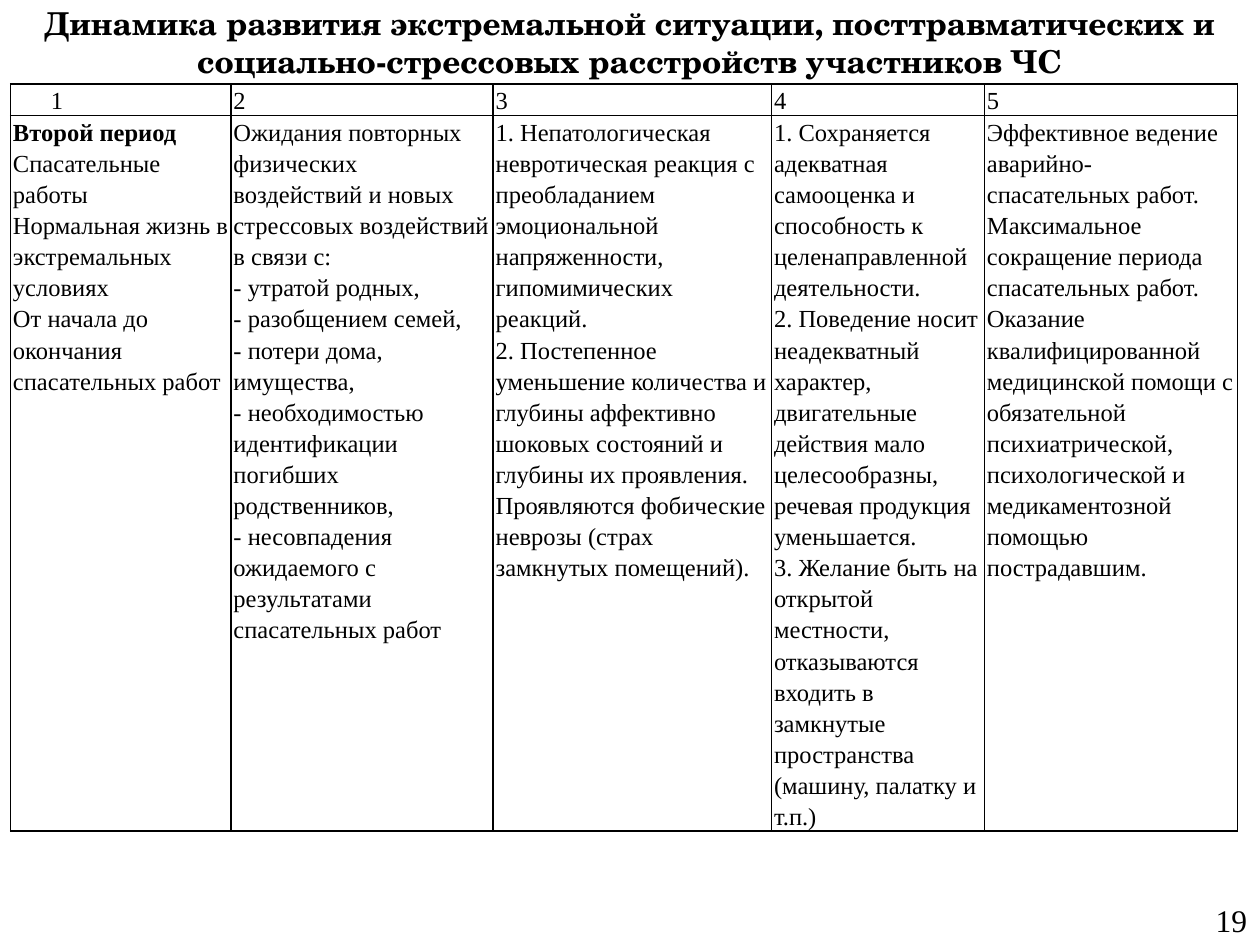
import pptx
import pptx.util
import pptx.dml.color
import pptx.enum.text
import pptx.oxml
import pptx.oxml.ns

Pt = pptx.util.Pt
ALIGN = pptx.enum.text.PP_ALIGN
ANCHOR = pptx.enum.text.MSO_ANCHOR
AUTO = pptx.enum.text.MSO_AUTO_SIZE

BLACK = pptx.dml.color.RGBColor(0x00, 0x00, 0x00)
BODY_FONT = "Times New Roman"
TITLE_FONT = "TeX Gyre Schola"

TITLE = ("Динамика развития экстремальной ситуации, посттравматических и "
         "социально-стрессовых расстройств участников ЧС")
COLUMN_WIDTHS = [126, 149.8, 159.1, 121.7, 144.7]
ROW_HEIGHTS = [18, 408]
PERIOD = [
    ["Второй период",
     "Спасательные работы",
     "Нормальная жизнь в экстремальных условиях",
     "От начала до окончания спасательных работ"],
    ["Ожидания повторных физических воздействий и новых стрессовых "
     "воздействий в связи с:",
     "- утратой родных,",
     "- разобщением семей,",
     "- потери дома, имущества,",
     "- необходимостью идентификации погибших родственников,",
     "- несовпадения ожидаемого с результатами спасательных работ"],
    ["1. Непатологическая невротическая реакция с преобладанием "
     "эмоциональной напряженности, гипомимических реакций.",
     "2. Постепенное уменьшение количества и глубины аффективно шоковых "
     "состояний и глубины их проявления. Проявляются фобические неврозы "
     "(страх замкнутых помещений)."],
    ["1. Сохраняется адекватная самооценка и способность к "
     "целенаправленной деятельности.",
     "2. Поведение носит неадекватный характер, двигательные действия мало "
     "целесообразны, речевая продукция уменьшается.",
     "3. Желание быть на открытой местности, отказываются входить в "
     "замкнутые пространства (машину, палатку и т.п.)"],
    ["Эффективное ведение аварийно-спасательных работ. Максимальное "
     "сокращение периода спасательных работ.",
     "Оказание квалифицированной медицинской помощи с обязательной "
     "психиатрической, психологической и медикаментозной помощью "
     "пострадавшим."],
]
ROWS = [[[str(n)] for n in range(1, len(PERIOD) + 1)], PERIOD]


def set_attrs(obj, **values):
    for name, value in values.items():
        setattr(obj, name, value)


def add_run(p, text, font, size, bold=False):
    r = p.add_run()
    r.text = text
    set_attrs(r.font, name=font, size=Pt(size), bold=bold)
    r.font.color.rgb = BLACK


def add_title(s):
    sp = s.shapes.title
    set_attrs(sp, left=Pt(0), top=Pt(0), width=Pt(720), height=Pt(48))
    tf = sp.text_frame
    set_attrs(tf, word_wrap=True, auto_size=AUTO.NONE,
              vertical_anchor=ANCHOR.MIDDLE)
    p = tf.paragraphs[0]
    p.alignment = ALIGN.CENTER
    add_run(p, TITLE, TITLE_FONT, 18, bold=True)


def set_borders(cell):
    tc_pr = cell._tc.get_or_add_tcPr()
    for i, side in enumerate(("lnL", "lnR", "lnT", "lnB")):
        tc_pr.insert(i, pptx.oxml.parse_xml(
            f'<a:{side} {pptx.oxml.ns.nsdecls("a")} w="{Pt(1)}">'
            f'<a:solidFill><a:srgbClr val="{BLACK}"/></a:solidFill>'
            f'</a:{side}>'))


def fill_cell(cell, lines):
    set_attrs(cell, margin_left=Pt(1.44), margin_right=Pt(1.44),
              margin_top=0, margin_bottom=0)
    cell.fill.background()
    set_borders(cell)
    tf = cell.text_frame
    for i, line in enumerate(lines):
        p = tf.add_paragraph() if i else tf.paragraphs[0]
        p.line_spacing = 1.15
        add_run(p, line, BODY_FONT, 14, bold=line == "Второй период")


def add_period_table(s):
    frame = s.shapes.add_table(len(ROWS), len(COLUMN_WIDTHS), Pt(6), Pt(48),
                               Pt(sum(COLUMN_WIDTHS)), Pt(sum(ROW_HEIGHTS)))
    table = frame.table
    set_attrs(table, first_row=False, horz_banding=False)
    for column, width in zip(table.columns, COLUMN_WIDTHS):
        column.width = Pt(width)
    for row, height, texts in zip(table.rows, ROW_HEIGHTS, ROWS):
        row.height = Pt(height)
        for cell, lines in zip(row.cells, texts):
            fill_cell(cell, lines)
    p = table.cell(0, 0).text_frame.paragraphs[0]
    p.alignment = ALIGN.JUSTIFY
    p._p.get_or_add_pPr().set("indent", str(Pt(21.6)))


def add_page_number(s):
    sp = s.shapes.add_textbox(Pt(687.6), Pt(511.2), Pt(32.4), Pt(28.8))
    tf = sp.text_frame
    set_attrs(tf, word_wrap=False, auto_size=AUTO.SHAPE_TO_FIT_TEXT)
    add_run(tf.paragraphs[0], "19", BODY_FONT, 18)


def main():
    prs = pptx.Presentation()
    set_attrs(prs, slide_width=Pt(720), slide_height=Pt(540))
    s = prs.slides.add_slide(prs.slide_layouts[5])
    add_title(s)
    add_period_table(s)
    add_page_number(s)
    prs.save("out.pptx")


if __name__ == "__main__":
    main()
